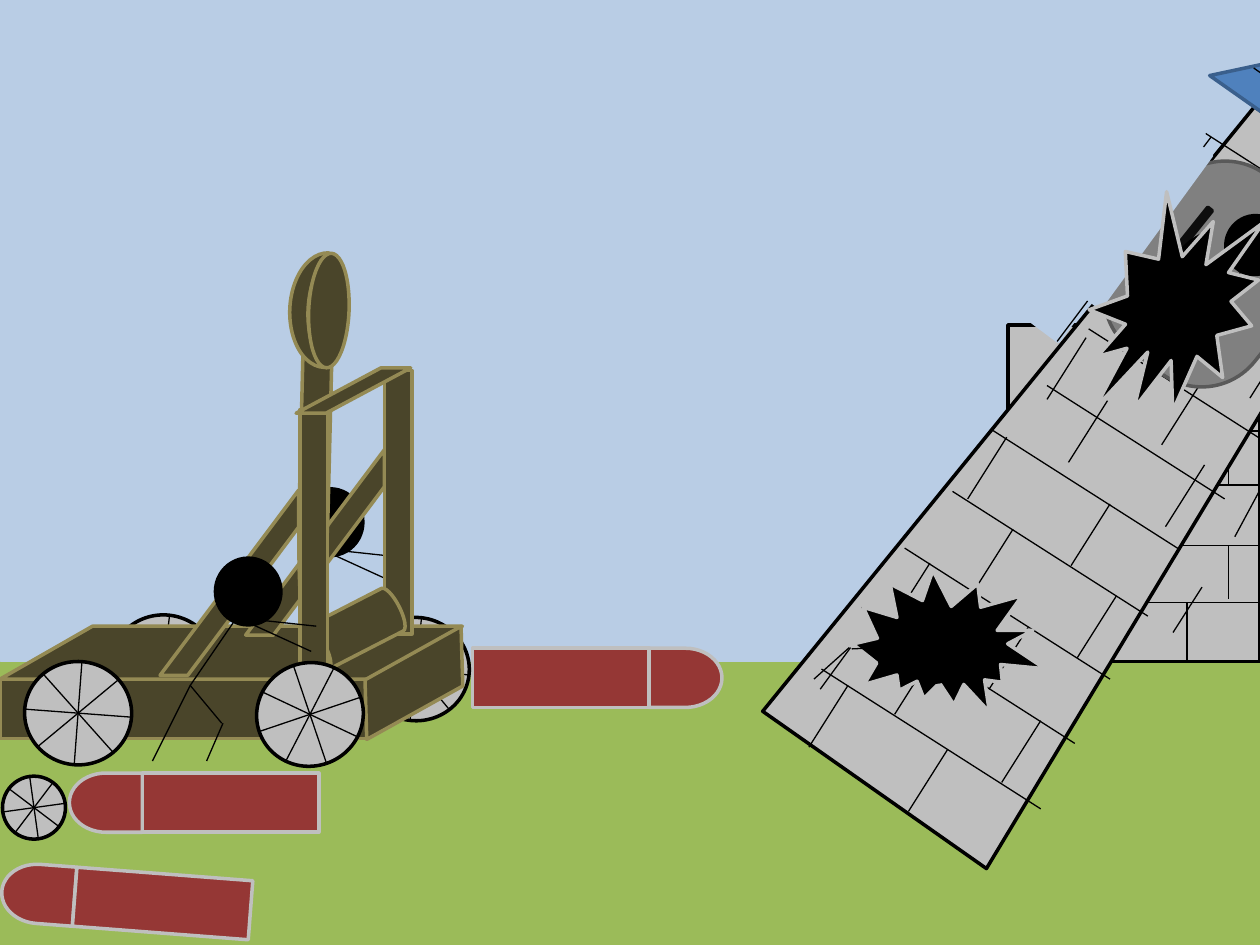
from math import cos, radians, sin

from lxml.etree import SubElement
from pptx import Presentation
from pptx.dml.color import RGBColor
from pptx.enum.shapes import MSO_CONNECTOR, MSO_SHAPE
from pptx.oxml.ns import qn
from pptx.util import Inches, Pt

COLORS = {
    "grass": "9BBB59", "sky": "B9CDE5", "stone": "BFBFBF", "black": "000000",
    "missile": "953735", "wood": "4A452A", "wood edge": "948A54",
    "roof": "4F81BD", "roof edge": "3A5F8C",
    "window": "808080", "window edge": "595959", "bar": "0D0D0D",
}

presentation = Presentation()
presentation.slide_width = Inches(10)
presentation.slide_height = Inches(7.5)
slide = presentation.slides.add_slide(presentation.slide_layouts[6])
column = presentation.slide_width / 10
row = presentation.slide_height / 7.5


def add_part(kind, box, fill, edge, rotation=0, adjustments=(), width=2):
    left, top, across, down = box
    shape = slide.shapes.add_shape(
        kind, round(left * column), round(top * row), round(across * column), round(down * row))
    shape.shadow.inherit = False
    shape.rotation = rotation
    for index, value in enumerate(adjustments):
        shape.adjustments[index] = value
    if fill:
        shape.fill.solid()
        shape.fill.fore_color.rgb = RGBColor.from_string(COLORS[fill])
    else:
        shape.fill.background()
    shape.line.color.rgb = RGBColor.from_string(COLORS[edge])
    shape.line.width = Pt(width)


def add_lines(segments):
    for x1, y1, x2, y2 in segments:
        connector = slide.shapes.add_connector(
            MSO_CONNECTOR.STRAIGHT,
            round(x1 * column), round(y1 * row), round(x2 * column), round(y2 * row))
        connector.line.color.rgb = RGBColor.from_string(COLORS["black"])
        connector.line.width = Pt(0.75)
        SubElement(connector.element.spPr, qn("a:effectLst"))


add_part(MSO_SHAPE.RECTANGLE, (0, 5.25, 10, 2.25), "grass", "grass")
add_part(MSO_SHAPE.RECTANGLE, (0.01, -0.01, 10, 5.25), "sky", "sky")

add_part(MSO_SHAPE.FLOWCHART_PROCESS, (8, 2.58, 2, 2.67), "stone", "black")
wall_courses = [(8.65, 2.97), (8.65, 3.42), (8.7, 3.85), (8.7, 4.33), (8.79, 4.78)]
add_lines((x, y, 10, y) for x, y in wall_courses)
wall_joints = [(9.42, 4.78, 5.25), (9.75, 4.33, 4.75), (9.38, 3.85, 4.32),
               (9.75, 3.42, 3.86), (9.38, 3, 3.4), (9.75, 2.58, 2.97)]
add_lines((x, top, x, bottom) for x, top, bottom in wall_joints)

body_length, tip_length, missile_height = 1.4, 0.58, 0.47
reach = (body_length + tip_length) / 2
for x, y, rotation in [(1.83, 6.37, 180), (1.29, 7.17, 184.4), (4.45, 5.38, 0)]:
    tip_x = x + reach * cos(radians(rotation))
    tip_y = y + reach * sin(radians(rotation))
    for kind, middle_x, middle_y, length in [
            (MSO_SHAPE.FLOWCHART_DELAY, tip_x, tip_y, tip_length),
            (MSO_SHAPE.RECTANGLE, x, y, body_length)]:
        box = (middle_x - length / 2, middle_y - missile_height / 2, length, missile_height)
        add_part(kind, box, "missile", "stone", rotation)

rear_timbers = [
    (MSO_SHAPE.FLOWCHART_PROCESS, (0, 5.39, 2.92, 0.47), 0, ()),
    (MSO_SHAPE.FLOWCHART_DATA, (0, 4.97, 3.67, 0.42), 0, ()),
    (MSO_SHAPE.FLOWCHART_DATA, (2.74, 5.21, 1.09, 0.42), 150.9, ()),
    (MSO_SHAPE.DIAGONAL_STRIPE, (1.95, 3.57, 1.1, 1.47), 180, (0.8,)),
    (MSO_SHAPE.FLOWCHART_PROCESS, (3.05, 2.94, 0.22, 2.09), 0, ()),
    (MSO_SHAPE.FLOWCHART_DELAY, (1.32, 3.88, 2.34, 0.23), 91.4, ()),
    (MSO_SHAPE.MOON, (2.3, 2, 0.29, 0.91), 2.5, ()),
    (MSO_SHAPE.OVAL, (2.45, 2.01, 0.32, 0.91), 2.5, ()),
    (MSO_SHAPE.CAN, (2.63, 4.6, 0.38, 0.78), 242.8, (0.31,)),
    (MSO_SHAPE.DIAGONAL_STRIPE, (1.27, 3.89, 1.1, 1.47), 180, (0.8,)),
    (MSO_SHAPE.FLOWCHART_PROCESS, (2.38, 3.25, 0.22, 2.09), 0, ()),
]
crossbar = [(MSO_SHAPE.PARALLELOGRAM, (2.35, 2.92, 0.91, 0.36), 0, (1.87,))]
rear_wheels = [(0.27, 6.41, 0.5, 0.5, 352.1), (3.3, 5.31, 0.85, 0.82, 186.4),
               (1.3, 5.29, 0.85, 0.82, 186.4)]
front_wheels = [(0.62, 5.66, 0.85, 0.82, 184.3), (2.46, 5.67, 0.85, 0.82, 161.3)]
limbs = [(0, 0, -0.3, 0.6), (0, 0, 0.25, 0.3), (0.26, 0.3, 0.13, 0.6),
         (0, 0, 0.37, -0.54), (0.37, -0.54, 0.96, -0.27), (0.35, -0.54, 1, -0.47)]

for hip_x, hip_y, wheels, timbers in [
        (2.16, 4.89, rear_wheels, rear_timbers), (1.51, 5.44, front_wheels, crossbar)]:
    add_lines((hip_x + x1, hip_y + y1, hip_x + x2, hip_y + y2) for x1, y1, x2, y2 in limbs)
    add_part(MSO_SHAPE.OVAL, (hip_x + 0.2, hip_y - 1.01, 0.52, 0.53), "black", "black")
    for x, y, across, down, rotation in wheels:
        add_part(MSO_SHAPE.OVAL, (x - across / 2, y - down / 2, across, down),
                 "stone", "black", rotation)
        turn = radians(rotation)
        for spoke in range(0, 180, 45):
            along = across / 2 * cos(radians(spoke))
            aside = down / 2 * sin(radians(spoke))
            dx = along * cos(turn) - aside * sin(turn)
            dy = along * sin(turn) + aside * cos(turn)
            add_lines([(x - dx, y - dy, x + dx, y + dy)])
    for kind, box, rotation, adjustments in timbers:
        add_part(kind, box, "wood", "wood edge", rotation, adjustments)

add_part(MSO_SHAPE.FLOWCHART_MANUAL_OPERATION, (7.63, 0.66, 2.17, 6.17), "stone", "black", 215.1)
add_part(MSO_SHAPE.FLOWCHART_EXTRACT, (9.74, 0.16, 2.17, 1.17), "roof", "roof edge", 35.1)
add_lines([
    (9.95, 0.54, 11.32, 1.5), (6.52, 5.31, 8.26, 6.42), (6.84, 4.82, 8.53, 5.9),
    (7.18, 4.35, 8.81, 5.39), (7.56, 3.9, 9.11, 4.89), (7.87, 3.41, 9.36, 4.36),
    (8.31, 3.06, 9.72, 3.96), (9.57, 1.06, 10.66, 1.76),
])
add_part(MSO_SHAPE.RECTANGLE, (8.7, 0.81, 0.33, 2), "sky", "sky", 36.7)
add_lines([(8.39, 2.71, 9.61, 1.09), (8.64, 2.61, 10, 3.48),
           (9.13, 1.9, 10.44, 2.73), (9.39, 1.58, 10.48, 2.28)])
tower_joints = [
    (6.73, 5.44), (7.52, 5.95), (8.26, 5.72), (8.16, 4.98), (8.86, 4.73), (8.81, 4),
    (9.56, 3.69), (9.53, 3.04), (10.23, 2.67), (10.06, 2.03), (7.41, 5.18), (7.38, 4.47),
    (8.04, 4.2), (7.99, 3.47), (8.79, 3.18), (8.62, 2.68), (10.14, 1.36),
]
add_lines((x, y, x - 0.31, y + 0.49) for x, y in tower_joints)

add_part(MSO_SHAPE.ROUNDED_RECTANGLE, (8.94, 1.3, 1.38, 1.75),
         "window", "window edge", 38.7, (0.39,))
add_part(MSO_SHAPE.MATH_PLUS, (9.19, 1.41, 0.29, 1.17), "bar", "bar", 38.7, (0.16,))
add_lines([
    (9.16, 2.75, 9.54, 2.52), (9.43, 2.96, 9.56, 2.54), (9.56, 2.52, 9.87, 2.13),
    (9.54, 4.66, 9.31, 5.02), (10.01, 3.87, 9.8, 4.26),
    (9.32, 2.16, 9.73, 2.14), (9.76, 2.13, 9.74, 2.46),
])
add_part(MSO_SHAPE.FLOWCHART_CONNECTOR, (9.73, 1.71, 0.46, 0.47), "black", "black", 32.6)
add_part(MSO_SHAPE.RECTANGLE, (8.75, 0.95, 0.47, 1.5), "sky", "sky", 36.1)
add_part(MSO_SHAPE.ARC, (9.15, 1.94, 1.21, 0.99), None, "black", 255.3, (158.8, 215.58), 3)
add_lines([(9.44, 2.24, 9.74, 2.46)])
add_part(MSO_SHAPE.EXPLOSION2, (6.8, 4.48, 1.48, 1.27), "black", "stone", 32.6)
add_lines([(9.6, 1.85, 9.44, 2.24), (9.47, 2.2, 9.29, 2.6)])
add_part(MSO_SHAPE.OVAL, (7.16, 4.92, 0.52, 0.47), "black", "black", 96.2)
add_lines([(7.19, 5.13, 6.76, 5.15), (6.74, 5.14, 6.46, 5.39), (6.75, 5.14, 6.51, 5.47)])
add_part(MSO_SHAPE.EXPLOSION1, (8.73, 1.5, 1.19, 1.97), "black", "stone", 32.6)

presentation.save("out.pptx")
